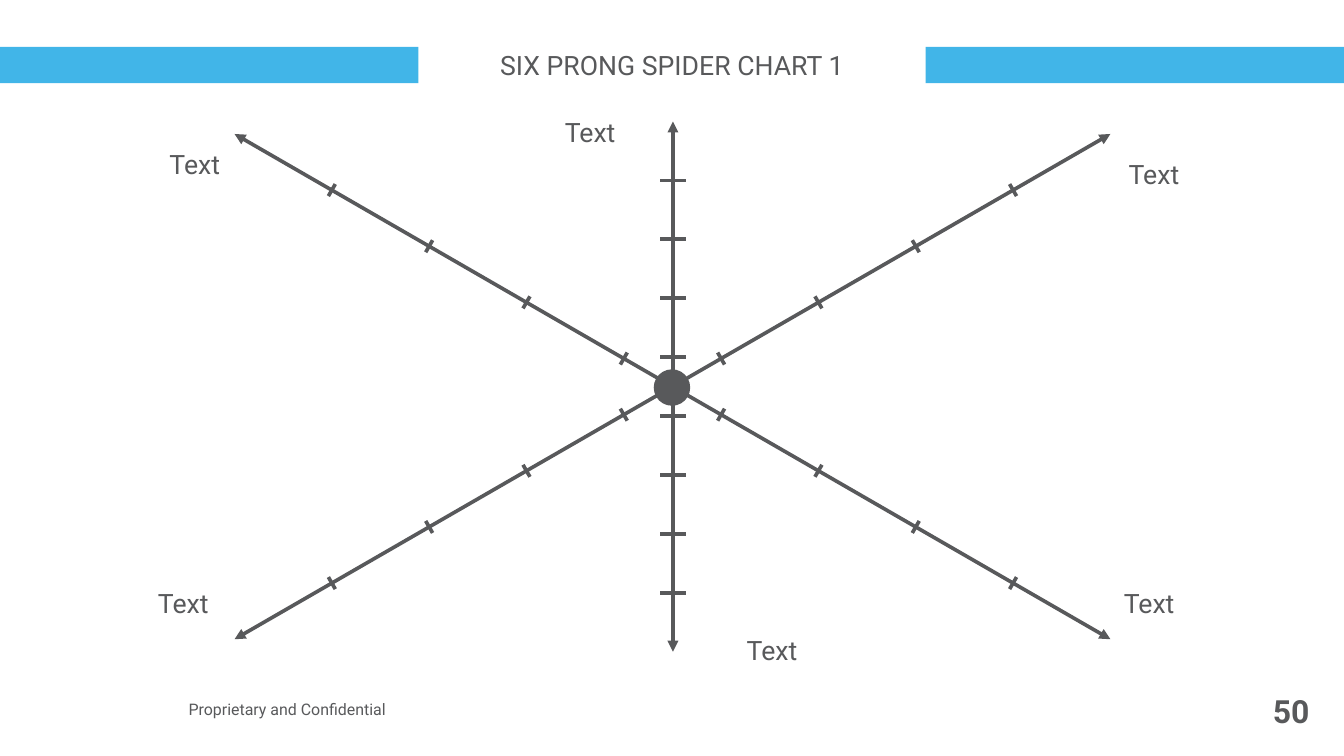
from math import hypot

from lxml.etree import SubElement
from pptx import Presentation
from pptx.dml.color import RGBColor
from pptx.enum.shapes import MSO_CONNECTOR, MSO_SHAPE
from pptx.enum.text import MSO_ANCHOR, PP_ALIGN
from pptx.oxml.ns import qn
from pptx.util import Inches, Pt

COLORS = {"blue": "41B5E8", "gray": "58595B", "white": "FFFFFF"}
FONT = "Roboto"
INTERVALS = 9
AXES = [
    ((7.03, 1.27), (7.03, 6.81), 0.27),
    ((11.6, 1.4), (2.45, 6.68), 0.145),
    ((2.45, 1.4), (11.6, 6.68), 0.145),
]
LABELS = [(5.84, 1.16), (11.73, 1.6), (1.71, 1.5), (11.68, 6.08), (1.59, 6.08), (7.74, 6.57)]


def color(name):
    """Return the named colour."""
    return RGBColor.from_string(COLORS[name])


def add_block(page, kind, bounds, fill):
    """Add a filled shape without outline or shadow."""
    block = page.shapes.add_shape(kind, *map(Inches, bounds))
    block.shadow.inherit = False
    block.fill.solid()
    block.fill.fore_color.rgb = color(fill)
    block.line.fill.background()
    return block


def write_text(box, text, size, align=PP_ALIGN.CENTER, inset=0.05,
               anchor=MSO_ANCHOR.MIDDLE, wrap=False, bold=False):
    """Fill a shape with one paragraph of text."""
    frame = box.text_frame
    frame.word_wrap = wrap
    frame.vertical_anchor = anchor
    frame.margin_left = frame.margin_right = Inches(inset)
    frame.margin_top = frame.margin_bottom = Inches(inset)
    para = frame.paragraphs[0]
    para.text = text
    para.alignment = align
    para.font.name = FONT
    para.font.size = Pt(size)
    para.font.bold = bold
    para.font.color.rgb = color("gray")


def add_text(page, bounds, text, size, **options):
    """Add a text box with one paragraph."""
    box = page.shapes.add_textbox(*map(Inches, bounds))
    write_text(box, text, size, **options)


def add_line(page, start, end, arrows=False):
    """Add a straight line, with arrowheads at both ends if asked."""
    line = page.shapes.add_connector(MSO_CONNECTOR.STRAIGHT, *map(Inches, (*start, *end)))
    line.line.color.rgb = color("gray")
    line.line.width = Pt(2.75)
    if arrows:
        outline = line.line._get_or_add_ln()
        for tag in ("a:headEnd", "a:tailEnd"):
            SubElement(outline, qn(tag), type="triangle")
    SubElement(line._element.spPr, qn("a:effectLst"))


def add_axis(page, start, end, tick_length):
    """Add a double-headed axis with evenly spaced perpendicular ticks."""
    add_line(page, start, end, arrows=True)
    run, rise = end[0] - start[0], end[1] - start[1]
    scale = tick_length / 2 / hypot(run, rise)
    across, down = rise * scale, -run * scale
    for step in range(1, INTERVALS):
        x = start[0] + run * step / INTERVALS
        y = start[1] + rise * step / INTERVALS
        add_line(page, (x - across, y - down), (x + across, y + down))


def main():
    """Build the spider chart slide."""
    deck = Presentation()
    deck.slide_width, deck.slide_height = Inches(14.04), Inches(7.9)
    page = deck.slides.add_slide(deck.slide_layouts[6])

    add_block(page, MSO_SHAPE.RECTANGLE, (0, 0.49, 14.04, 0.38), "blue")
    add_text(page, (13.08, 7.22, 0.6, 0.41), "50", 24,
             align=PP_ALIGN.RIGHT, inset=0, bold=True)
    add_text(page, (1.93, 7.09, 3.49, 0.65), "Proprietary and Confidential", 12,
             align=PP_ALIGN.LEFT, inset=0.04, wrap=True)
    title = add_block(page, MSO_SHAPE.RECTANGLE, (4.37, 0.41, 5.3, 0.54), "white")
    write_text(title, "SIX PRONG SPIDER CHART 1", 20, inset=0.1, wrap=True)

    for start, end, tick_length in AXES:
        add_axis(page, start, end, tick_length)
    for left, top in LABELS:
        add_text(page, (left, top, 0.65, 0.44), "Text", 20, anchor=MSO_ANCHOR.TOP)

    hub = add_block(page, MSO_SHAPE.OVAL, (6.84, 3.87, 0.36, 0.36), "gray")
    hub.line.color.rgb = color("gray")
    hub.line.width = Pt(1.5)
    deck.save("out.pptx")


if __name__ == "__main__":
    main()
